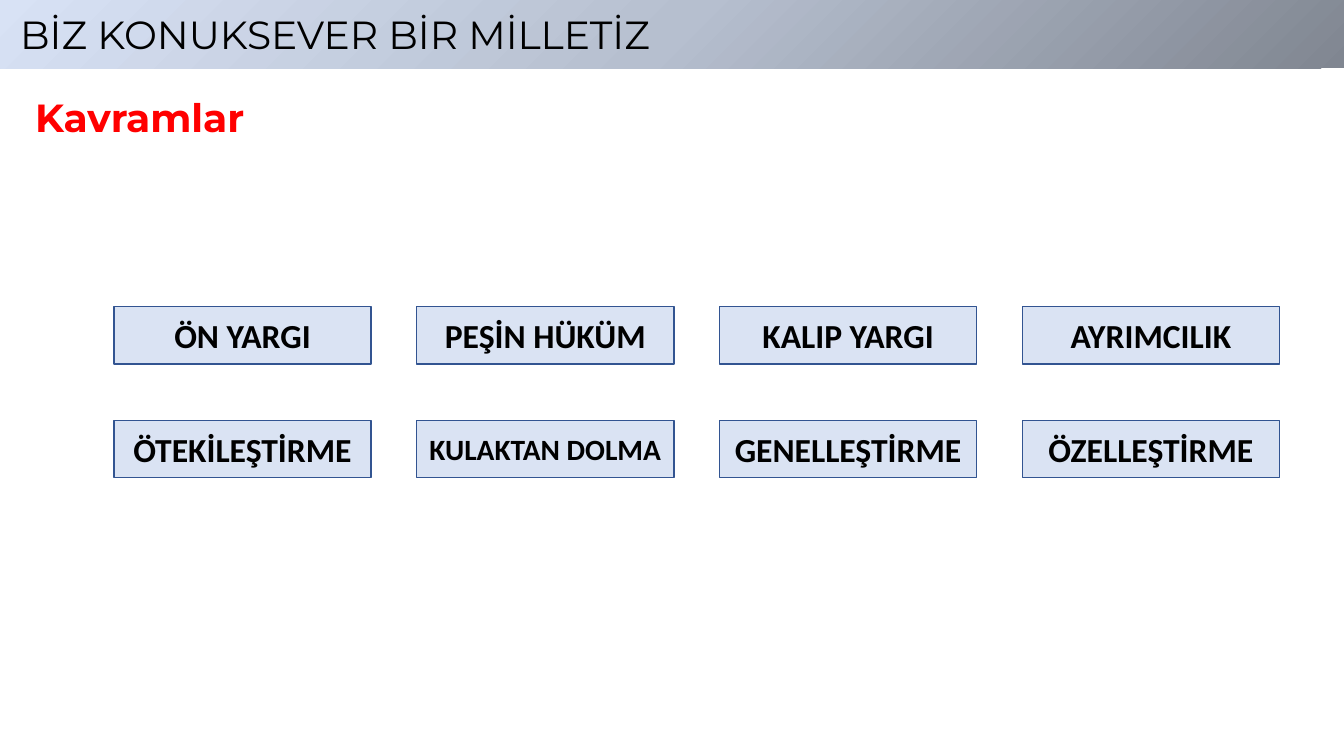
from copy import deepcopy

from pptx import Presentation
from pptx.dml.color import RGBColor
from pptx.enum.shapes import MSO_SHAPE as Shape
from pptx.enum.text import MSO_ANCHOR as Anchor, MSO_AUTO_SIZE as AutoSize, PP_ALIGN as Align
from pptx.util import Inches, Pt

SLIDE_WIDTH, SLIDE_HEIGHT = 13.33, 7.5
BAND_HEIGHT = 0.68
GRID_LEFT, GRID_TOP, GRID_RIGHT = 1.13, 3.04, 12.69
CELL_WIDTH, CELL_HEIGHT = 2.55, 0.57
ROW_PITCH = 1.13

CONCEPTS = [
    ["ÖN YARGI", "PEŞİN HÜKÜM", "KALIP YARGI", "AYRIMCILIK"],
    ["ÖTEKİLEŞTİRME", "KULAKTAN DOLMA", "GENELLEŞTİRME", "ÖZELLEŞTİRME"],
]
SMALLER_SIZES = {"KULAKTAN DOLMA": 21}
COLUMN_PITCH = (GRID_RIGHT - GRID_LEFT - CELL_WIDTH) / (len(CONCEPTS[0]) - 1)

HEADING_FONT = {"name": "Montserrat", "size": Pt(28), "bold": False}
SUBHEADING_FONT = HEADING_FONT | {"bold": True}
CONCEPT_FONT = {"name": "Calibri", "size": Pt(24), "bold": True}


def paint(color, hex_value):
    color.rgb = RGBColor.from_string(hex_value)


def apply(target, values):
    for attribute, value in values.items():
        setattr(target, attribute, value)


def write(shape, text, font_values, hex_value, align, **frame_values):
    frame = shape.text_frame
    apply(frame, frame_values)
    paragraph = frame.paragraphs[0]
    paragraph.alignment = align
    run = paragraph.add_run()
    run.text = text
    apply(run.font, font_values)
    paint(run.font.color, hex_value)


def fill_gradient(fill, angle, stops):
    fill.gradient()
    fill.gradient_angle = angle
    last = fill.gradient_stops[-1]._gs
    for _ in range(len(stops) - len(fill.gradient_stops)):
        last.addprevious(deepcopy(last))
    for stop, (position, hex_value) in zip(fill.gradient_stops, stops):
        stop.position = position
        paint(stop.color, hex_value)


def add_heading(slide, text):
    band = slide.shapes.title
    apply(band, {"left": 0, "top": 0, "width": Inches(SLIDE_WIDTH),
                 "height": Inches(BAND_HEIGHT)})
    fill_gradient(band.fill, 135, [(0, "808691"), (0.5, "B6BFCF"), (1, "D8E2F5")])
    write(band, text, HEADING_FONT, "000000", Align.LEFT,
          margin_left=Inches(0.2), vertical_anchor=Anchor.MIDDLE,
          auto_size=AutoSize.NONE)


def add_subheading(slide, text):
    box = slide.shapes.add_textbox(*map(Inches, (0.25, 0.88, 2.42, 0.57)))
    write(box, text, SUBHEADING_FONT, "FF0000", Align.LEFT,
          word_wrap=False, auto_size=AutoSize.SHAPE_TO_FIT_TEXT)


def add_concept(slide, text, column, row):
    left = GRID_LEFT + column * COLUMN_PITCH
    top = GRID_TOP + row * ROW_PITCH
    cell = slide.shapes.add_shape(
        Shape.RECTANGLE, *map(Inches, (left, top, CELL_WIDTH, CELL_HEIGHT)))
    cell.shadow.inherit = False
    cell.fill.solid()
    paint(cell.fill.fore_color, "DAE3F3")
    paint(cell.line.color, "325491")
    cell.line.width = Pt(1)
    size = Pt(SMALLER_SIZES.get(text, 24))
    write(cell, text, CONCEPT_FONT | {"size": size}, "000000", Align.CENTER,
          vertical_anchor=Anchor.MIDDLE)


def main():
    deck = Presentation()
    apply(deck, {"slide_width": Inches(SLIDE_WIDTH), "slide_height": Inches(SLIDE_HEIGHT)})
    slide = deck.slides.add_slide(deck.slide_layouts.get_by_name("Title Only"))
    add_heading(slide, "BİZ KONUKSEVER BİR MİLLETİZ")
    add_subheading(slide, "Kavramlar")
    for row, concepts in enumerate(CONCEPTS):
        for column, concept in enumerate(concepts):
            add_concept(slide, concept, column, row)
    deck.save("out.pptx")


if __name__ == "__main__":
    main()
